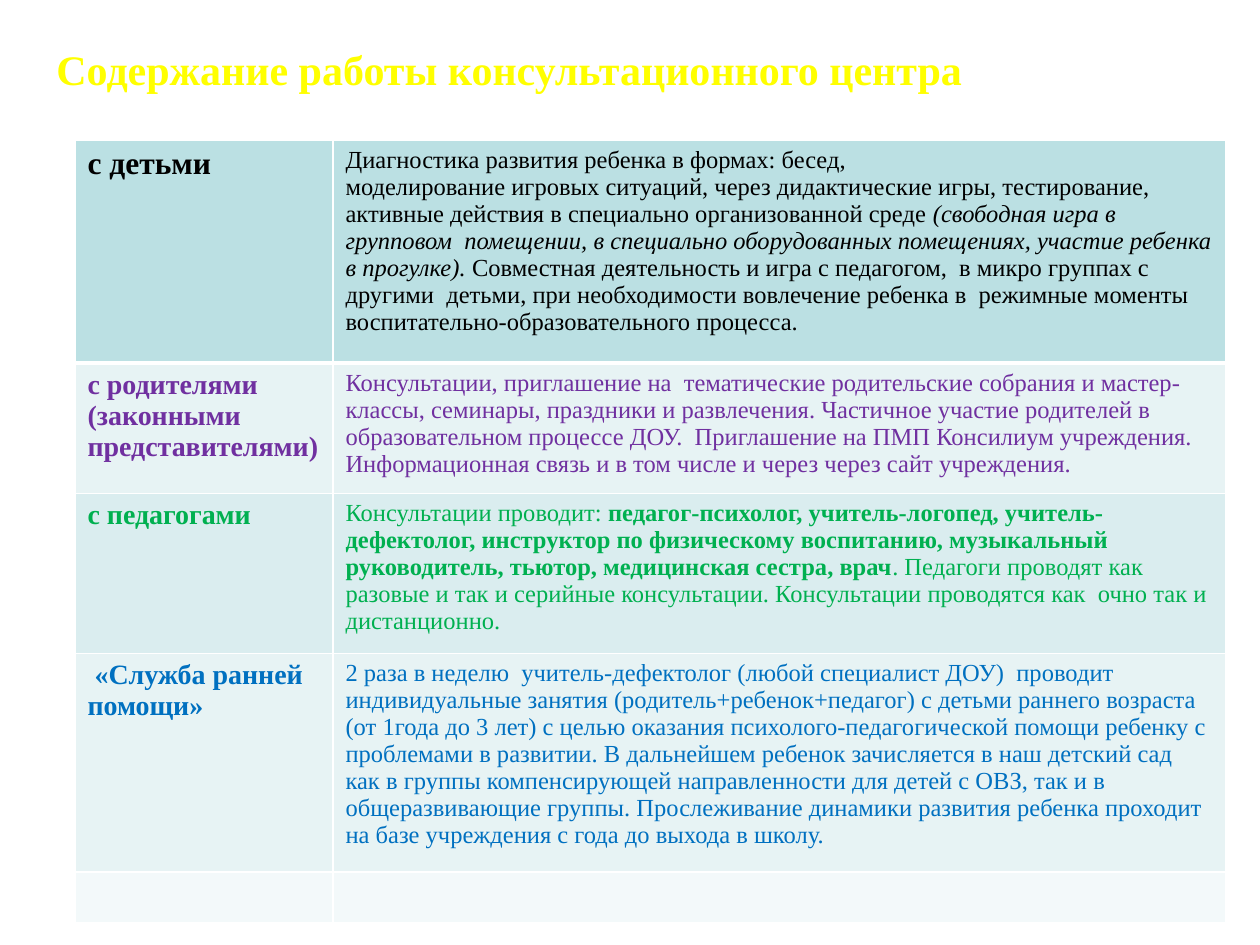
from lxml import etree
from pptx import Presentation
from pptx.dml.color import RGBColor
from pptx.enum.text import MSO_AUTO_SIZE, PP_ALIGN
from pptx.oxml.ns import qn
from pptx.util import Emu, Pt

JUSTIFY = PP_ALIGN.JUSTIFY
FIT_SHAPE = MSO_AUTO_SIZE.SHAPE_TO_FIT_TEXT

FONT = "Times New Roman"
PX_PER_INCH = 126

YELLOW = RGBColor(0xFF, 0xFF, 0x00)
BLACK = RGBColor(0x00, 0x00, 0x00)
PURPLE = RGBColor(0x70, 0x30, 0xA0)
GREEN = RGBColor(0x00, 0xB0, 0x50)
BLUE = RGBColor(0x00, 0x70, 0xC0)
WHITE = RGBColor(0xFF, 0xFF, 0xFF)
TEAL = RGBColor(0xBB, 0xE0, 0xE3)
TEAL_MID = RGBColor(0xDA, 0xED, 0xEF)
TEAL_LIGHT = RGBColor(0xE7, 0xF3, 0xF4)
TEAL_PALE = RGBColor(0xF3, 0xF9, 0xFA)

COLUMN_WIDTHS = [258, 893]
BOLD = {"bold": True}
ITALIC = {"italic": True}

# Each row: height, fill, text colour, heading size, heading, paragraphs of (text, format) runs
ROWS = [
    (223, TEAL, BLACK, 18, "с детьми", [
        [("Диагностика развития ребенка в формах: бесед,", {})],
        [("моделирование игровых ситуаций, через дидактические игры, тестирование,", {})],
        [("активные действия в специально организованной среде ", {}),
         ("(свободная игра в групповом  помещении, в специально оборудованных "
          "помещениях, участие ребенка в прогулке). ", ITALIC),
         ("Совместная деятельность и игра с педагогом,  в микро группах с другими  "
          "детьми, при необходимости вовлечение ребенка в  режимные моменты "
          "воспитательно-образовательного процесса.", {})],
    ]),
    (130, TEAL_LIGHT, PURPLE, 16, "с родителями (законными представителями)", [
        [("Консультации, приглашение на  тематические родительские собрания и "
          "мастер-классы, семинары, праздники и развлечения. Частичное участие "
          "родителей в образовательном процессе ДОУ.  Приглашение на ПМП Консилиум "
          "учреждения. Информационная связь и в том числе и через через сайт "
          "учреждения.", {})],
    ]),
    (160, TEAL_MID, GREEN, 16, "с педагогами", [
        [("Консультации проводит: ", {}),
         ("педагог-психолог, учитель-логопед, учитель-дефектолог, инструктор по "
          "физическому воспитанию, музыкальный руководитель, тьютор, медицинская "
          "сестра, врач", BOLD),
         (". Педагоги проводят как разовые и так и серийные консультации. "
          "Консультации проводятся как  очно так и дистанционно.", {})],
    ]),
    (218, TEAL_LIGHT, BLUE, 16, " «Служба ранней помощи»", [
        [("2 раза в неделю  учитель-дефектолог (любой специалист ДОУ)  проводит "
          "индивидуальные занятия (родитель+ребенок+педагог) с детьми раннего "
          "возраста (от 1года до 3 лет) с целью оказания психолого-педагогической "
          "помощи ребенку с проблемами в развитии. В дальнейшем ребенок зачисляется "
          "в наш детский сад как в группы компенсирующей направленности для детей с "
          "ОВЗ, так и в общеразвивающие группы. Прослеживание динамики развития "
          "ребенка проходит на базе учреждения с года до выхода в школу.", {})],
    ]),
    (51, TEAL_PALE, BLACK, 16, "", []),
]


def px(length):
    return Emu(round(length * 914400 / PX_PER_INCH))


def add_text(paragraph, text, size, color, bold=False, italic=False):
    run = paragraph.add_run()
    run.text = text
    font = run.font
    font.name = FONT
    font.size = Pt(size)
    font.bold = bold
    font.italic = italic
    font.color.rgb = color


def set_borders(cell, bottom_width):
    """Draw white borders; call before the fill, which must follow them in the XML."""
    properties = cell._tc.get_or_add_tcPr()
    for side, width in (("L", 1), ("R", 1), ("T", 1), ("B", bottom_width)):
        line = etree.SubElement(properties, qn(f"a:ln{side}"), w=str(Pt(width)))
        solid = etree.SubElement(line, qn("a:solidFill"))
        etree.SubElement(solid, qn("a:srgbClr"), val=str(WHITE))


def add_title(slide, left, top, width, height):
    title = slide.shapes.add_textbox(px(left), px(top), px(width), px(height))
    frame = title.text_frame
    frame.word_wrap = True
    frame.auto_size = FIT_SHAPE
    paragraph = frame.paragraphs[0]
    paragraph.alignment = JUSTIFY
    add_text(paragraph, "Содержание работы консультационного центра",
             size=24, color=YELLOW, bold=True)


def fill_row(cells, fill, color, heading_size, heading, paragraphs, bottom_width):
    for cell in cells:
        set_borders(cell, bottom_width)
        cell.fill.solid()
        cell.fill.fore_color.rgb = fill
    heading_cell, details_cell = cells
    if heading:
        add_text(heading_cell.text_frame.paragraphs[0], heading,
                 size=heading_size, color=color, bold=True)
    details = details_cell.text_frame
    for index, runs in enumerate(paragraphs):
        paragraph = details.add_paragraph() if index else details.paragraphs[0]
        for text, style in runs:
            add_text(paragraph, text, size=14, color=color, **style)


def add_work_table(slide, left, top):
    height = sum(row[0] for row in ROWS)
    table = slide.shapes.add_table(
        len(ROWS), len(COLUMN_WIDTHS),
        px(left), px(top), px(sum(COLUMN_WIDTHS)), px(height)).table
    table.first_row = False
    table.horz_banding = False
    for column, width in zip(table.columns, COLUMN_WIDTHS):
        column.width = px(width)
    for index, (row, (row_height, *content)) in enumerate(zip(table.rows, ROWS)):
        row.height = px(row_height)
        fill_row(list(row.cells), *content, bottom_width=1 if index else 3)


def main():
    presentation = Presentation()
    presentation.slide_width = px(1260)
    presentation.slide_height = px(945)
    slide = presentation.slides.add_slide(presentation.slide_layouts[6])
    add_title(slide, 44, 37, 1042, 63)
    add_work_table(slide, 75, 140)
    presentation.save("out.pptx")


if __name__ == "__main__":
    main()
